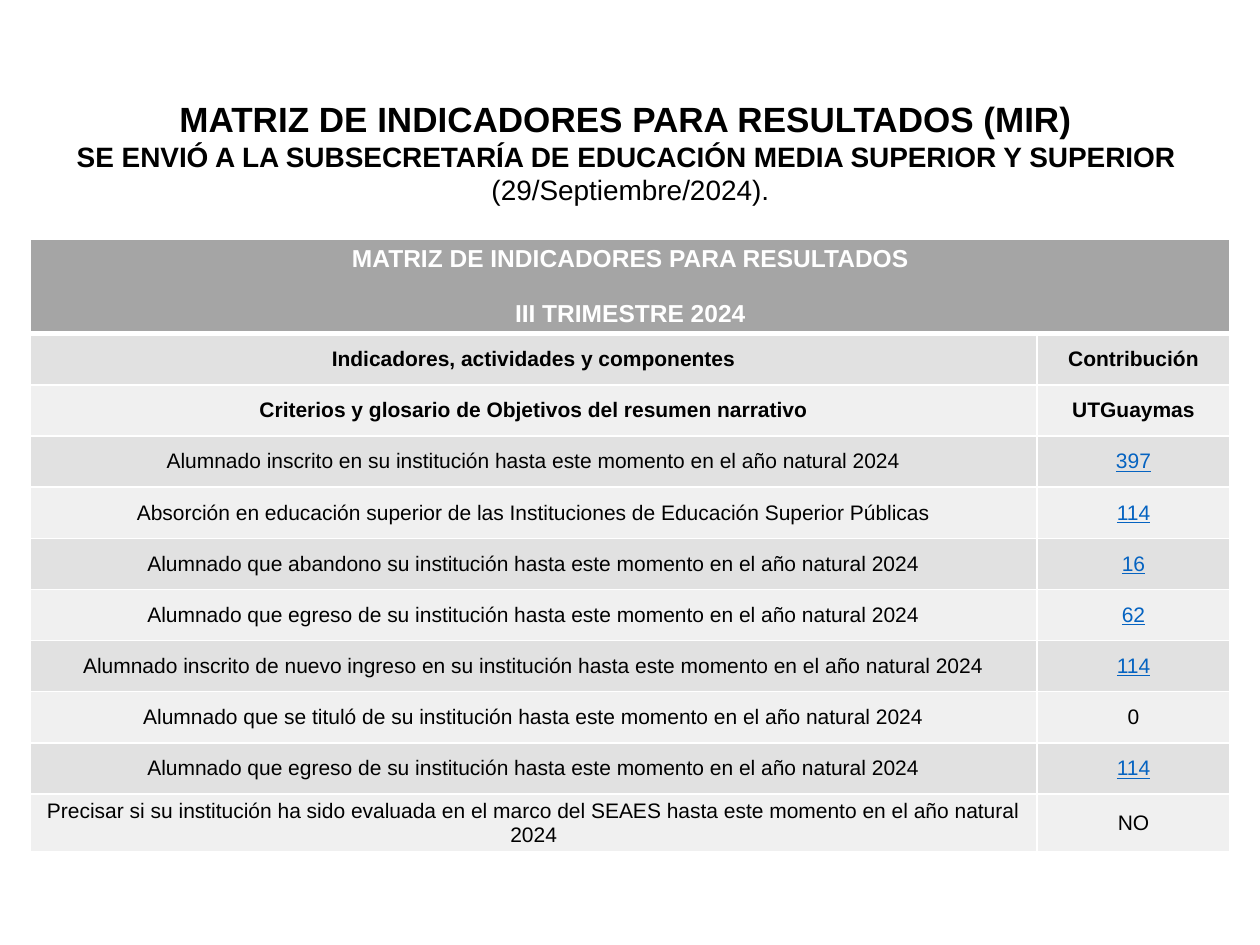
import lxml.etree
import pptx
import pptx.dml.color
import pptx.enum.text
import pptx.oxml.ns
import pptx.util

Pt = pptx.util.Pt
CENTER = pptx.enum.text.PP_ALIGN.CENTER


def color(hex_string):
    return pptx.dml.color.RGBColor.from_string(hex_string)


def add_border(cell, side, width):
    properties = cell._tc.get_or_add_tcPr()
    line = lxml.etree.SubElement(
        properties, pptx.oxml.ns.qn("a:ln" + side), w=str(Pt(width)))
    fill = lxml.etree.SubElement(line, pptx.oxml.ns.qn("a:solidFill"))
    lxml.etree.SubElement(fill, pptx.oxml.ns.qn("a:srgbClr"), val="FFFFFF")


presentation = pptx.Presentation()
presentation.slide_width = Pt(720)
presentation.slide_height = Pt(540)
slide = presentation.slides.add_slide(presentation.slide_layouts[6])

# Indicator table: text, contribution
rows = [
    ("MATRIZ DE INDICADORES PARA RESULTADOS\nIII TRIMESTRE 2024", ""),
    ("Indicadores, actividades y componentes", "Contribución"),
    ("Criterios y glosario de Objetivos del resumen narrativo", "UTGuaymas"),
    ("Alumnado inscrito en su institución hasta este momento en el año natural 2024", "397"),
    ("Absorción en educación superior de las Instituciones de Educación Superior Públicas", "114"),
    ("Alumnado que abandono su institución hasta este momento en el año natural 2024", "16"),
    ("Alumnado que egreso de su institución hasta este momento en el año natural 2024", "62"),
    ("Alumnado inscrito de nuevo ingreso en su institución hasta este momento en el año natural 2024", "114"),
    ("Alumnado que se tituló de su institución hasta este momento en el año natural 2024", "0"),
    ("Alumnado que egreso de su institución hasta este momento en el año natural 2024", "114"),
    ("Precisar si su institución ha sido evaluada en el marco del SEAES hasta este momento en el año natural 2024", "NO"),
]
heights = [53.7] + [29.25] * 9 + [33.1]
table = slide.shapes.add_table(
    len(rows), 2, Pt(17.5), Pt(137), Pt(685.5), Pt(sum(heights))).table
table.first_row = False
table.horz_banding = False
table.columns[0].width = Pt(575)
table.columns[1].width = Pt(110.5)

for row_index, row in enumerate(rows):
    table.rows[row_index].height = Pt(heights[row_index])
    is_title = row_index == 0
    for column_index, text in enumerate(row):
        cell = table.cell(row_index, column_index)
        cell.margin_left = cell.margin_right = Pt(5.4)
        cell.margin_top = cell.margin_bottom = Pt(2.7)
        cell.vertical_anchor = pptx.enum.text.MSO_ANCHOR.MIDDLE
        for side in "LRTB":
            thick = (row_index, side) in ((0, "B"), (1, "T"))
            add_border(cell, side, 3 if thick else 1)
        cell.fill.solid()
        band = "E1E1E1" if row_index % 2 else "F0F0F0"
        cell.fill.fore_color.rgb = color("A5A5A5" if is_title else band)

        # Nonzero figures look like links
        is_figure = text.isdigit() and text != "0"
        cell.text_frame.text = text
        for paragraph in cell.text_frame.paragraphs:
            paragraph.alignment = CENTER
            for run in paragraph.runs:
                run.font.name = "Arial"
                run.font.size = Pt(14 if is_title else 12)
                run.font.bold = row_index < 3
                run.font.underline = is_figure
                run.font.color.rgb = color(
                    "FFFFFF" if is_title else "0563C1" if is_figure else "000000")

table.cell(0, 0).merge(table.cell(0, 1))
table.cell(0, 0).text_frame.paragraphs[1].space_before = Pt(16)

# Slide heading: text, size, bold
heading_lines = [
    ("MATRIZ DE INDICADORES PARA RESULTADOS (MIR) ", 20, True),
    ("SE ENVIÓ A LA SUBSECRETARÍA DE EDUCACIÓN MEDIA SUPERIOR Y SUPERIOR ", 16, True),
    ("(29/Septiembre/2024).", 16, False),
]
heading = slide.shapes.add_textbox(Pt(17.5), Pt(52), Pt(685.5), Pt(70.5))
heading.text_frame.word_wrap = True
heading.text_frame.text = "\n".join(line[0] for line in heading_lines)
for paragraph, (text, size, bold) in zip(heading.text_frame.paragraphs, heading_lines):
    paragraph.alignment = CENTER
    for run in paragraph.runs:
        run.font.name = "Arial"
        run.font.size = Pt(size)
        run.font.bold = bold
        run.font.color.rgb = color("000000")

presentation.save("out.pptx")
